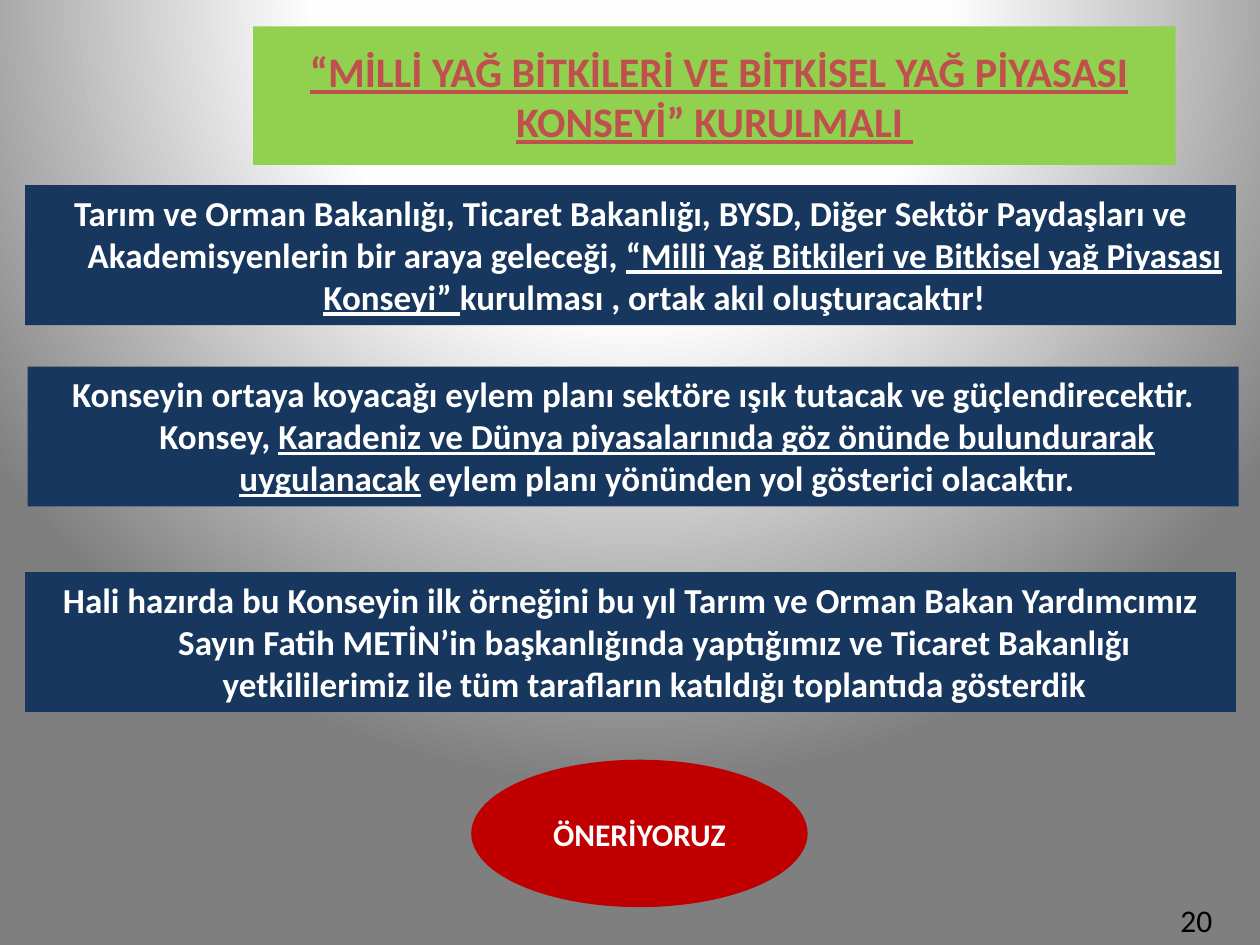
from dataclasses import dataclass
from typing import NamedTuple

from lxml import etree
from pptx import Presentation
from pptx import util as u
from pptx.dml.color import RGBColor
from pptx.enum import shapes, text
from pptx.oxml import parse_xml
from pptx.oxml.ns import qn


@dataclass(frozen=True)
class Theme:
    font: str = "Calibri"
    white: str = "FFFFFF"
    black: str = "000000"
    green: str = "92D050"
    rust: str = "C0504D"
    red: str = "C00000"
    navy: str = "17375E"
    title_size: int = 24
    body_size: int = 20
    small_size: int = 18
    glow: tuple = ((0, "FFFFFF"), (40, "FEFEFE"), (100, "7F7F7F"))


class Run(NamedTuple):
    words: str
    underline: bool = False


class Panel(NamedTuple):
    left: float
    top: float
    runs: tuple[Run, ...]


T = Theme()
PANEL_W, PANEL_H, HANGING = 9.61, 1.11, 0.38

TITLE = (
    Run(" "),
    Run("“MİLLİ YAĞ BİTKİLERİ VE BİTKİSEL YAĞ PİYASASI KONSEYİ” KURULMALI ", True),
)
PANELS = (
    Panel(0.2, 1.47, (
        Run("Tarım ve Orman Bakanlığı, Ticaret Bakanlığı, BYSD, Diğer Sektör "
            "Paydaşları ve Akademisyenlerin bir araya geleceği, "),
        Run("“Milli Yağ Bitkileri ve Bitkisel yağ Piyasası Konseyi” ", True),
        Run("kurulması , ortak akıl oluşturacaktır!"),
    )),
    Panel(0.22, 2.91, (
        Run("Konseyin ortaya koyacağı eylem planı sektöre ışık tutacak ve "
            "güçlendirecektir. Konsey, "),
        Run("Karadeniz ve Dünya piyasalarınıda göz önünde bulundurarak "
            "uygulanacak", True),
        Run(" eylem planı yönünden yol gösterici olacaktır."),
    )),
    Panel(0.2, 4.54, (
        Run("Hali hazırda bu Konseyin ilk örneğini bu yıl Tarım ve Orman Bakan "
            "Yardımcımız Sayın Fatih METİN’in başkanlığında yaptığımız ve Ticaret "
            "Bakanlığı yetkililerimiz ile tüm tarafların katıldığı toplantıda "
            "gösterdik"),
    )),
)


def box(left: float, top: float, width: float, height: float) -> tuple:
    return tuple(u.Inches(v) for v in (left, top, width, height))


def paint(sp, color: str) -> None:
    sp.fill.solid()
    sp.fill.fore_color.rgb = RGBColor.from_string(color)
    sp.line.fill.background()


def write(sp, runs: tuple[Run, ...], size: int, color: str, bold: bool = True,
          align=text.PP_ALIGN.CENTER, anchor=text.MSO_ANCHOR.MIDDLE):
    """Fill the shape's only paragraph with runs and return the paragraph."""
    tf = sp.text_frame
    tf.word_wrap, tf.vertical_anchor = True, anchor
    p = tf.paragraphs[0]
    p.alignment = align
    for run in runs:
        r = p.add_run()
        r.text = run.words
        style = {"name": T.font, "size": u.Pt(size), "bold": bold,
                 "underline": run.underline}
        for key, value in style.items():
            setattr(r.font, key, value)
        r.font.color.rgb = RGBColor.from_string(color)
    return p


def add_block(s, kind, place: tuple, color: str):
    sp = s.shapes.add_shape(kind, *place)
    sp.shadow.inherit = False
    paint(sp, color)
    return sp


def add_panel(s, panel: Panel) -> None:
    sp = add_block(s, shapes.MSO_SHAPE.RECTANGLE,
                   box(panel.left, panel.top, PANEL_W, PANEL_H), T.navy)
    p = write(sp, panel.runs, T.body_size, T.white, anchor=text.MSO_ANCHOR.TOP)
    indent = u.Inches(HANGING)
    pPr = p._p.get_or_add_pPr()
    pPr.set("marL", str(indent))
    pPr.set("indent", str(-indent))


def set_background(s) -> None:
    """Circular glow centred above the slide."""
    s.background.fill.solid()
    solid = next(s._element.iter(qn("a:solidFill")))
    stops = "".join(f'<a:gs pos="{pos * 1000}"><a:srgbClr val="{color}"/></a:gs>'
                    for pos, color in T.glow)
    solid.getparent().replace(solid, parse_xml(
        '<a:gradFill xmlns:a="http://schemas.openxmlformats.org/drawingml/2006/main"'
        f' rotWithShape="1"><a:gsLst>{stops}</a:gsLst><a:path path="circle">'
        '<a:fillToRect l="50000" t="-80000" r="50000" b="180000"/>'
        '</a:path></a:gradFill>'))


def set_title(s) -> None:
    """Turn the title placeholder into a rounded green banner."""
    sp = s.shapes.title
    sp.left, sp.top, sp.width, sp.height = box(2.01, 0.21, 7.32, 1.1)
    geom = etree.SubElement(sp._element.spPr, qn("a:prstGeom"), prst="roundRect")
    etree.SubElement(geom, qn("a:avLst"))
    paint(sp, T.green)
    write(sp, TITLE, T.title_size, T.rust)
    sp.text_frame.auto_size = text.MSO_AUTO_SIZE.NONE


def main() -> None:
    prs = Presentation()
    prs.slide_width, prs.slide_height = u.Inches(10), u.Inches(7.5)
    s = prs.slides.add_slide(prs.slide_layouts[5])
    set_background(s)
    set_title(s)

    # Call to action
    sp = add_block(s, shapes.MSO_SHAPE.OVAL, box(3.74, 6.03, 2.67, 1.17), T.red)
    write(sp, (Run("ÖNERİYORUZ"),), T.small_size, T.white)

    # Argument panels
    for panel in PANELS:
        add_panel(s, panel)

    # Page number
    sp = s.shapes.add_textbox(*box(9.27, 7.1, 0.51, 0.4))
    write(sp, (Run("20"),), T.small_size, T.black, bold=False,
          align=text.PP_ALIGN.LEFT, anchor=text.MSO_ANCHOR.TOP)

    prs.save("out.pptx")


if __name__ == "__main__":
    main()
